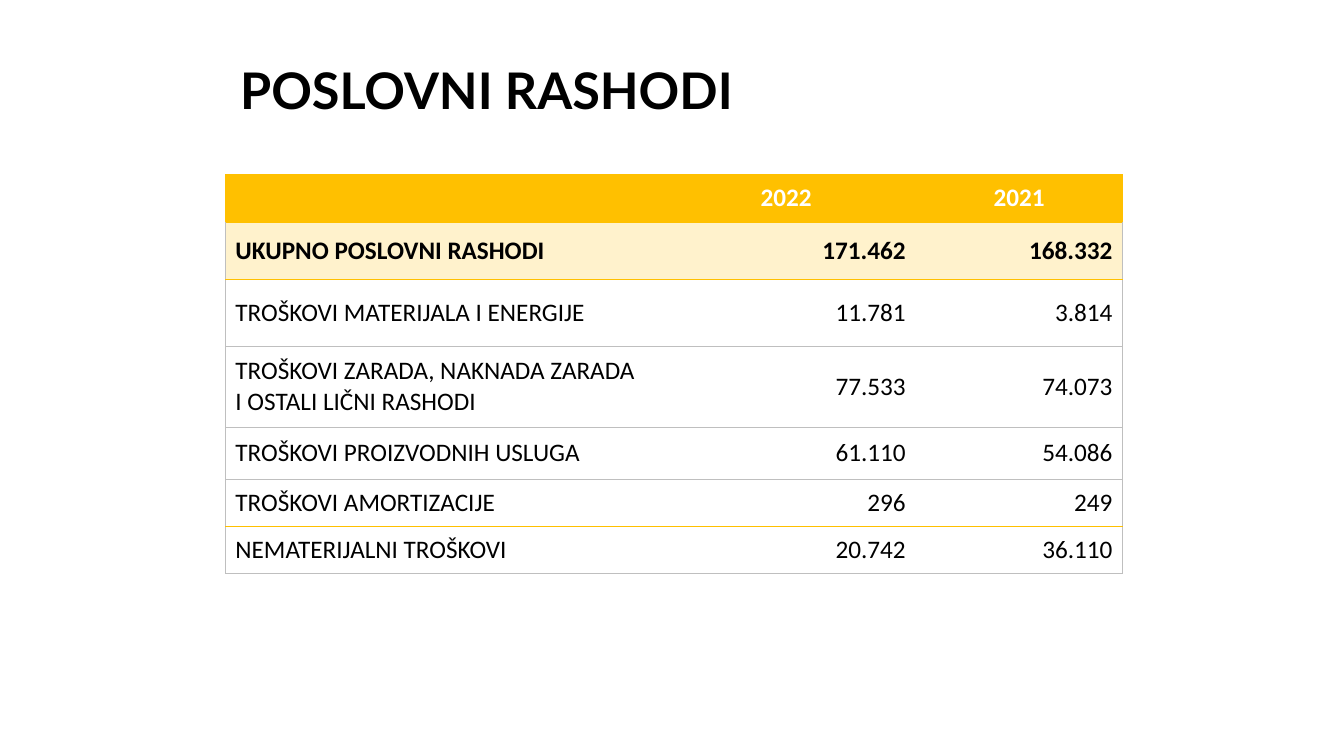
from dataclasses import dataclass

from lxml.etree import SubElement
from pptx import Presentation
from pptx.dml.color import RGBColor
from pptx.enum.text import MSO_ANCHOR as Anchor, PP_ALIGN as Align
from pptx.oxml.ns import qn
from pptx.util import Cm, Pt

GOLD, CREAM, WHITE, BLACK, GREY = "FFC000", "FFF2CC", "FFFFFF", "000000", "BFBFBF"
COLUMN_WIDTHS = (10.87, 6.53, 5.21)


@dataclass
class Row:
    label: str
    y2022: str
    y2021: str
    height: float
    fill: str = WHITE
    color: str = BLACK
    bold: bool = False
    side: str = GREY
    below: str = GREY
    number_align: Align = Align.RIGHT


ROWS = [
    Row("", "2022", "2021", 1.19, GOLD, WHITE, True, GOLD, GOLD, Align.CENTER),
    Row("UKUPNO POSLOVNI RASHODI", "171.462", "168.332", 1.45, CREAM, bold=True, below=GOLD),
    Row("TROŠKOVI MATERIJALA I ENERGIJE", "11.781", "3.814", 1.69),
    Row("TROŠKOVI ZARADA, NAKNADA ZARADA I OSTALI LIČNI RASHODI", "77.533", "74.073", 2.03),
    Row("TROŠKOVI PROIZVODNIH USLUGA", "61.110", "54.086", 1.32),
    Row("TROŠKOVI AMORTIZACIJE", "296", "249", 1.19, below=GOLD),
    Row("NEMATERIJALNI TROŠKOVI", "20.742", "36.110", 1.19),
]


def rgb(color: str) -> RGBColor:
    return RGBColor.from_string(color)


def write(tf, text: str, *, size: float, font: str, color: str = BLACK,
          bold: bool = False, align: Align = Align.LEFT) -> None:
    p = tf.paragraphs[0]
    p.alignment = align
    if not text:
        return
    r = p.add_run()
    r.text = text
    r.font.size = Pt(size)
    r.font.name = font
    r.font.bold = bold
    r.font.color.rgb = rgb(color)


def set_borders(cell, borders: dict[str, str | None]) -> None:
    tc_pr = cell._tc.get_or_add_tcPr()
    for i, (side, color) in enumerate(borders.items()):
        ln = SubElement(tc_pr, qn(f"a:ln{side}"), w=str(Pt(0.5)))
        if color:
            fill = SubElement(ln, qn("a:solidFill"))
            SubElement(fill, qn("a:srgbClr"), val=color)
        else:
            SubElement(ln, qn("a:noFill"))
        tc_pr.insert(i, ln)


def add_title(slide, text: str) -> None:
    s = slide.shapes.title
    s.left, s.top, s.width, s.height = Cm(2.67), Cm(0), Cm(29.21), Cm(4.7)
    tf = s.text_frame
    tf.margin_left = Cm(3.38)
    tf.vertical_anchor = Anchor.MIDDLE
    tf.paragraphs[0].line_spacing = 0.9
    write(tf, text, size=36, font="Lato", bold=True)


def add_expenses(slide, rows: list[Row]) -> None:
    table = slide.shapes.add_table(
        len(rows), len(COLUMN_WIDTHS), Cm(5.68), Cm(4.4),
        Cm(sum(COLUMN_WIDTHS)), Cm(sum(row.height for row in rows))).table
    table.horz_banding = False
    for column, width in zip(table.columns, COLUMN_WIDTHS):
        column.width = Cm(width)
    last = len(COLUMN_WIDTHS) - 1
    above = GOLD
    for i, row in enumerate(rows):
        table.rows[i].height = Cm(row.height)
        for j, text in enumerate((row.label, row.y2022, row.y2021)):
            cell = table.cell(i, j)
            cell.fill.solid()
            cell.fill.fore_color.rgb = rgb(row.fill)
            cell.vertical_anchor = Anchor.MIDDLE
            write(cell.text_frame, text, size=18, font="Calibri", color=row.color,
                  bold=row.bold, align=row.number_align if j else Align.LEFT)
            set_borders(cell, {"L": row.side if j == 0 else None,
                               "R": row.side if j == last else None,
                               "T": above, "B": row.below})
        above = row.below


def main() -> None:
    prs = Presentation()
    prs.slide_width, prs.slide_height = Cm(33.87), Cm(19.05)
    slide = prs.slides.add_slide(prs.slide_layouts[5])
    add_title(slide, "POSLOVNI RASHODI")
    add_expenses(slide, ROWS)
    prs.save("out.pptx")


if __name__ == "__main__":
    main()
